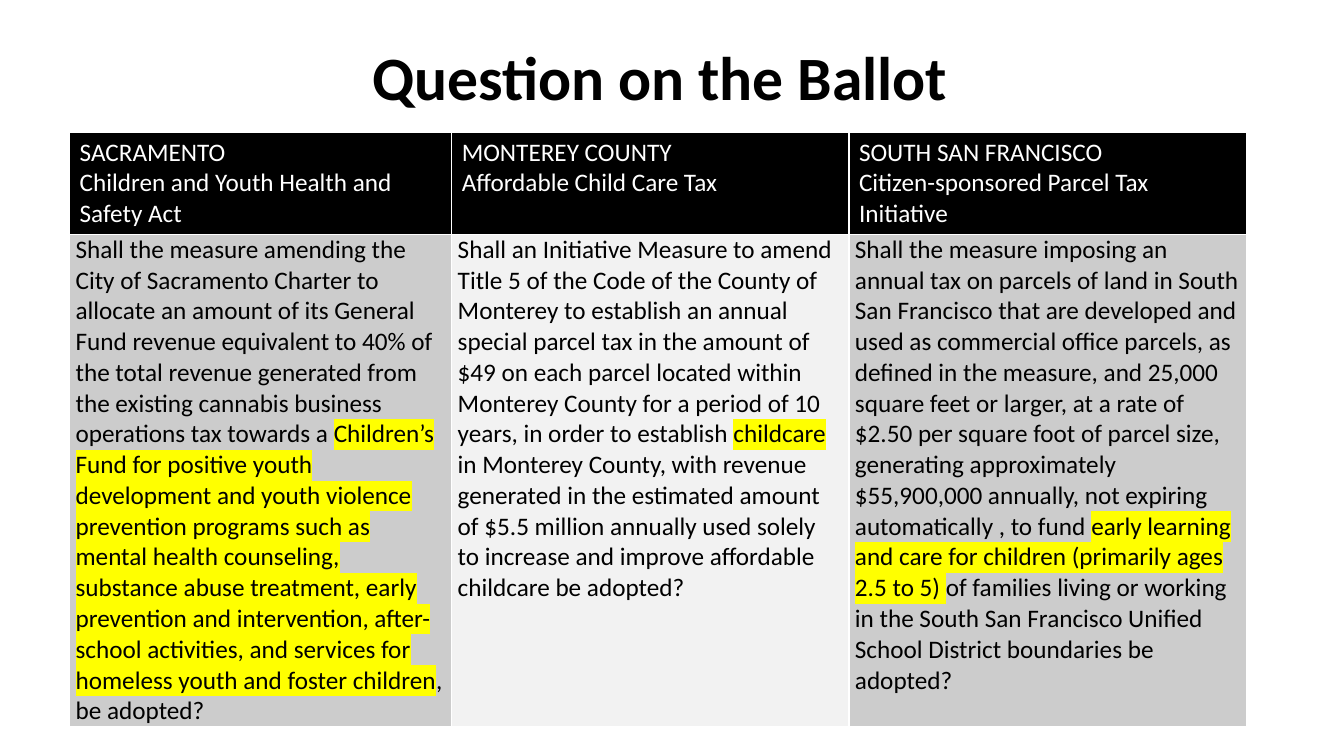
from lxml import etree
from pptx import Presentation
from pptx import util as u
from pptx.dml.color import RGBColor
from pptx.enum import text
from pptx.oxml import ns

COLORS = {
    "ink": "000000",
    "paper": "FFFFFF",
    "outer": "CCCCCC",
    "middle": "F2F2F2",
    "highlight": "FFFF00",
}

MEASURES = [
    (
        "SACRAMENTO",
        "Children and Youth Health and Safety Act",
        "outer",
        [
            "Shall the measure amending the City of Sacramento Charter to allocate an amount "
            "of its General Fund revenue equivalent to 40% of the total revenue generated from "
            "the existing cannabis business operations tax towards a ",
            "Children’s Fund for positive youth development and youth violence prevention "
            "programs such as mental health counseling, substance abuse treatment, early "
            "prevention and intervention, after-school activities, and services for homeless "
            "youth and foster children",
            ", be adopted?",
        ],
    ),
    (
        "MONTEREY COUNTY",
        "Affordable Child Care Tax",
        "middle",
        [
            "Shall an Initiative Measure to amend Title 5 of the Code of the County of Monterey "
            "to establish an annual special parcel tax in the amount of $49 on each parcel "
            "located within Monterey County for a period of 10 years, in order to establish ",
            "childcare",
            " in Monterey County, with revenue generated in the estimated amount of $5.5 million "
            "annually used solely to increase and improve affordable childcare be adopted?",
        ],
    ),
    (
        "SOUTH SAN FRANCISCO",
        "Citizen-sponsored Parcel Tax Initiative",
        "outer",
        [
            "Shall the measure imposing an annual tax on parcels of land in South San Francisco "
            "that are developed and used as commercial office parcels, as defined in the measure, "
            "and 25,000 square feet or larger, at a rate of $2.50 per square foot of parcel size, "
            "generating approximately $55,900,000 annually, not expiring automatically , to fund ",
            "early learning and care for children (primarily ages 2.5 to 5) ",
            "of families living or working in the South San Francisco Unified School District "
            "boundaries be adopted?",
        ],
    ),
]


def add_color(parent, color):
    etree.SubElement(parent, ns.qn("a:srgbClr"), val=COLORS[color])


def highlight(run):
    properties = run.font._element
    marker = etree.Element(ns.qn("a:highlight"))
    add_color(marker, "highlight")
    properties.find(ns.qn("a:solidFill")).addnext(marker)


def write(frame, paragraphs, size=18, color="ink", bold=False, spacing=None):
    frame.word_wrap = True
    for index, pieces in enumerate(paragraphs):
        paragraph = frame.paragraphs[0] if index == 0 else frame.add_paragraph()
        paragraph.alignment = text.PP_ALIGN.LEFT
        if spacing:
            paragraph.line_spacing = spacing
        for position, piece in enumerate(pieces):
            run = paragraph.add_run()
            run.text = piece
            run.font.name = "Calibri"
            run.font.size = u.Pt(size)
            run.font.bold = bold
            run.font.color.rgb = RGBColor.from_string(COLORS[color])
            if position % 2:
                highlight(run)


def format_cell(cell, fill):
    properties = cell._tc.get_or_add_tcPr()
    for side in ("lnL", "lnR", "lnT", "lnB"):
        border = etree.SubElement(properties, ns.qn(f"a:{side}"), w=str(u.Pt(1)))
        add_color(etree.SubElement(border, ns.qn("a:solidFill")), "paper")
    cell.fill.solid()
    cell.fill.fore_color.rgb = RGBColor.from_string(COLORS[fill])


def place_title(slide, left, top, width, height):
    title = slide.shapes.title
    title.left, title.top, title.width, title.height = map(u.Inches, (left, top, width, height))
    frame = title.text_frame
    frame.auto_size = text.MSO_AUTO_SIZE.NONE
    frame.vertical_anchor = text.MSO_ANCHOR.MIDDLE
    write(frame, [["Question on the Ballot"]], size=44, bold=True, spacing=0.9)


def place_measures(slide, left, top, width, height):
    table = slide.shapes.add_table(
        2, len(MEASURES), *map(u.Inches, (left, top, width, height))
    ).table
    first_width, header_height = 3.79, 0.72
    other_width = (width - first_width) / (len(MEASURES) - 1)
    table.rows[0].height = u.Inches(header_height)
    table.rows[1].height = u.Inches(height - header_height)
    for index, (place, measure, fill, question) in enumerate(MEASURES):
        table.columns[index].width = u.Inches(other_width if index else first_width)
        heading, body = table.cell(0, index), table.cell(1, index)
        format_cell(heading, "ink")
        write(heading.text_frame, [[place], [measure]], color="paper")
        format_cell(body, fill)
        body.margin_left = body.margin_right = u.Inches(0.06)
        body.margin_top = body.margin_bottom = 0
        write(body.text_frame, [question])


def main():
    deck = Presentation()
    deck.slide_width, deck.slide_height = u.Inches(13.33), u.Inches(7.5)
    slide = deck.slides.add_slide(deck.slide_layouts[5])
    place_title(slide, 3.59, 0.28, 7.5, 1.04)
    place_measures(slide, 0.69, 1.31, 11.67, 5.27)
    deck.save("out.pptx")


if __name__ == "__main__":
    main()
